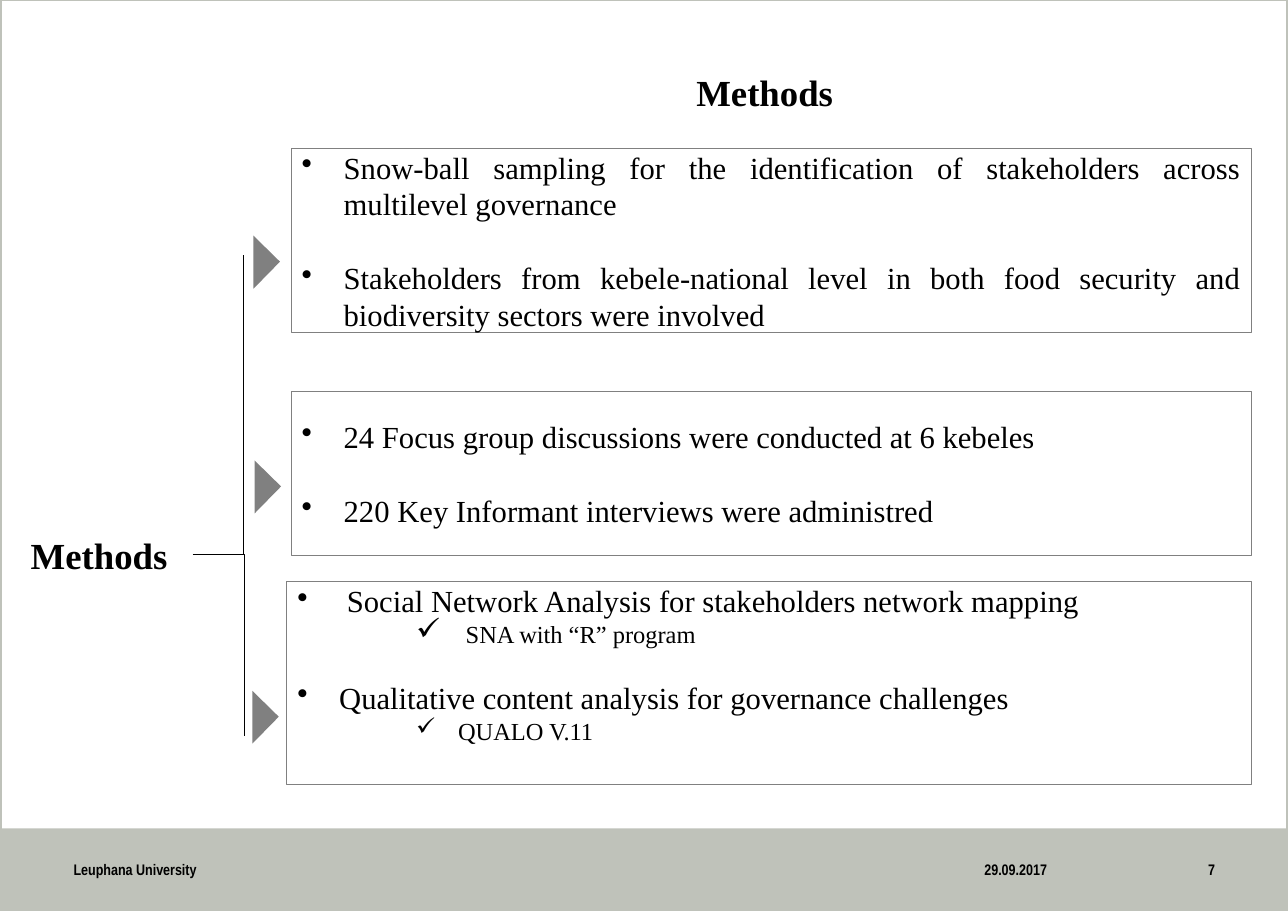
from dataclasses import dataclass

import pptx
import pptx.dml.color
import pptx.enum.shapes
import pptx.enum.text
import pptx.oxml.ns
import pptx.util
from lxml import etree

Pt = pptx.util.Pt
ALIGN = pptx.enum.text.PP_ALIGN
ANCHOR = pptx.enum.text.MSO_ANCHOR
SHAPE = pptx.enum.shapes.MSO_SHAPE
COLORS = {"text": "000000", "paper": "FFFFFF", "band": "BFC2BA", "accent": "808080"}
SERIF, NARROW = "Times New Roman", "Arial Narrow"


@dataclass
class Area:
    left: float
    top: float
    width: float
    height: float

    def lengths(self) -> list:
        return [Pt(v) for v in (self.left, self.top, self.width, self.height)]


@dataclass
class Point:
    text: str
    before: float = 0
    size: float = 20
    margin: float = 27.4
    hanging: float = 27.4
    bullet: str = "•"
    bullet_percent: int = 100
    level: int = 0


@dataclass
class Panel:
    area: Area
    points: list[Point]
    align: ALIGN = ALIGN.JUSTIFY
    anchor: ANCHOR = ANCHOR.MIDDLE
    inset_top: float = 0


@dataclass
class FooterItem:
    text: str
    area: Area
    align: ALIGN
    inset_right: float = 7.2


SAMPLING = Panel(Area(190.1, 97.2, 627.8, 120.2), [
    Point("Snow-ball sampling for the identification of stakeholders across multilevel governance"),
    Point("Stakeholders from kebele-national level in both food security and "
          "biodiversity sectors were involved", before=24.5),
])
INTERVIEWS = Panel(Area(190.1, 255.6, 627.8, 107.3), [
    Point("24 Focus group discussions were conducted at 6 kebeles"),
    Point("220 Key Informant interviews were administred", before=24.5),
], align=ALIGN.LEFT)
ANALYSIS = Panel(Area(187.2, 379.6, 630.7, 133.2), [
    Point("Social Network Analysis for stakeholders network mapping", margin=32.4, hanging=32.4),
    Point("SNA with “R” program", size=16, margin=110.1, hanging=32.4,
          bullet="✓", bullet_percent=125, level=1),
    Point("Qualitative content analysis for governance challenges", before=20),
    Point("QUALO V.11", size=16, margin=105.1, bullet="✓", level=1),
], anchor=ANCHOR.TOP, inset_top=1)
FOOTER = [
    FooterItem("7", Area(738.7, 555.8, 55.4, 25.2), ALIGN.RIGHT, 0),
    FooterItem("Leuphana University", Area(41, 555.8, 375.8, 25.2), ALIGN.LEFT),
    FooterItem("29.09.2017", Area(596.9, 555.8, 94.3, 25.2), ALIGN.RIGHT),
]
LABEL_AREA = Area(13, 325.4, 113, 74.2)
BRANCH_ENDS = [(159.1, 167), (159.8, 481)]
POINTERS = [(157, 162.7), (157.7, 309.6), (156.2, 460.1)]


def rgb(name: str) -> pptx.dml.color.RGBColor:
    """Return a named colour."""
    return pptx.dml.color.RGBColor.from_string(COLORS[name])


def format_runs(paragraph, size: float, font: str, bold: bool = False) -> None:
    """Format every run of a paragraph."""
    for run in paragraph.runs:
        run.font.size, run.font.name, run.font.bold = Pt(size), font, bold
        run.font.color.rgb = rgb("text")


def add_block(slide, kind: SHAPE, area: Area, fill: str | None,
              line: str | None = None, line_width: float = 0.25):
    """Add a preset shape with a flat fill and an optional outline."""
    block = slide.shapes.add_shape(kind, *area.lengths())
    block.shadow.inherit = False
    if fill:
        block.fill.solid()
        block.fill.fore_color.rgb = rgb(fill)
    else:
        block.fill.background()
    if line:
        block.line.color.rgb = rgb(line)
        block.line.width = Pt(line_width)
    else:
        block.line.fill.background()
    return block


def set_bullet(paragraph, point: Point) -> None:
    """Give a paragraph its bullet and hanging indent."""
    properties = paragraph._p.get_or_add_pPr()
    properties.set("marL", str(Pt(point.margin)))
    properties.set("indent", str(-Pt(point.hanging)))
    size = etree.SubElement(properties, pptx.oxml.ns.qn("a:buSzPct"))
    size.set("val", str(point.bullet_percent * 1000))
    etree.SubElement(properties, pptx.oxml.ns.qn("a:buChar")).set("char", point.bullet)


def add_panel(slide, panel: Panel) -> None:
    """Add an outlined box of bullet points."""
    frame = add_block(slide, SHAPE.RECTANGLE, panel.area, "paper", "accent").text_frame
    frame.word_wrap = True
    frame.vertical_anchor = panel.anchor
    frame.margin_top, frame.margin_bottom = Pt(panel.inset_top), 0
    frame.text = "\n".join(point.text for point in panel.points)
    for paragraph, point in zip(frame.paragraphs, panel.points):
        set_bullet(paragraph, point)
        paragraph.level = point.level
        paragraph.alignment = panel.align
        if point.before:
            paragraph.space_before = Pt(point.before)
        format_runs(paragraph, point.size, SERIF)


def add_branch(slide, start: tuple[float, float], end: tuple[float, float]) -> None:
    """Add a one-bend connector that runs sideways and then vertically."""
    branch = slide.shapes.add_connector(
        pptx.enum.shapes.MSO_CONNECTOR.ELBOW, *(Pt(v) for v in (*start, *end)))
    branch.line.color.rgb = rgb("text")
    branch.line.width = Pt(0.75)
    properties = branch._element.spPr
    properties.find(pptx.oxml.ns.qn("a:prstGeom")).set("prst", "bentConnector2")
    etree.SubElement(properties, pptx.oxml.ns.qn("a:effectLst"))


def add_footer_item(slide, item: FooterItem) -> None:
    """Add one footer text."""
    frame = slide.shapes.add_textbox(*item.area.lengths()).text_frame
    frame.word_wrap = True
    frame.vertical_anchor = ANCHOR.MIDDLE
    frame.margin_right = Pt(item.inset_right)
    frame.text = item.text
    frame.paragraphs[0].alignment = item.align
    format_runs(frame.paragraphs[0], 10, NARROW, bold=True)


def set_title(slide) -> None:
    """Place and format the slide title."""
    title = slide.shapes.title
    title.left, title.top, title.width, title.height = Area(308.2, 49, 383, 43.9).lengths()
    frame = title.text_frame
    frame.text = "Methods"
    frame.auto_size = pptx.enum.text.MSO_AUTO_SIZE.NONE
    frame.vertical_anchor = ANCHOR.TOP
    frame.margin_left = frame.margin_right = frame.margin_top = frame.margin_bottom = 0
    frame.paragraphs[0].alignment = ALIGN.CENTER
    frame.paragraphs[0].line_spacing = 0.9
    format_runs(frame.paragraphs[0], 24, SERIF, bold=True)


def add_label(slide) -> None:
    """Add the label at the root of the branches."""
    frame = add_block(slide, SHAPE.RECTANGLE, LABEL_AREA, "paper").text_frame
    frame.word_wrap = True
    frame.vertical_anchor = ANCHOR.MIDDLE
    frame.text = "Methods"
    frame.paragraphs[0].alignment = ALIGN.LEFT
    format_runs(frame.paragraphs[0], 24, SERIF, bold=True)


def main() -> None:
    """Build the methods slide."""
    deck = pptx.Presentation()
    deck.slide_width, deck.slide_height = Pt(841.7), Pt(595.4)
    slide = deck.slides.add_slide(deck.slide_layouts[5])
    add_block(slide, SHAPE.RECTANGLE, Area(0, 541.4, 841.7, 54), "band")
    add_block(slide, SHAPE.RECTANGLE, Area(0, 0, 841.7, 595.4), None, "band", 2)
    set_title(slide)
    for item in FOOTER:
        add_footer_item(slide, item)
    add_label(slide)
    for panel in (INTERVIEWS, SAMPLING):
        add_panel(slide, panel)
    root = (LABEL_AREA.left + LABEL_AREA.width, LABEL_AREA.top + LABEL_AREA.height / 2)
    for end in BRANCH_ENDS:
        add_branch(slide, root, end)
    for left, top in POINTERS:
        pointer = add_block(slide, SHAPE.ISOSCELES_TRIANGLE, Area(left, top, 34.6, 17.3), "accent")
        pointer.rotation = 90
        pointer.adjustments[0] = 0.49
    add_panel(slide, ANALYSIS)
    deck.save("out.pptx")


if __name__ == "__main__":
    main()
